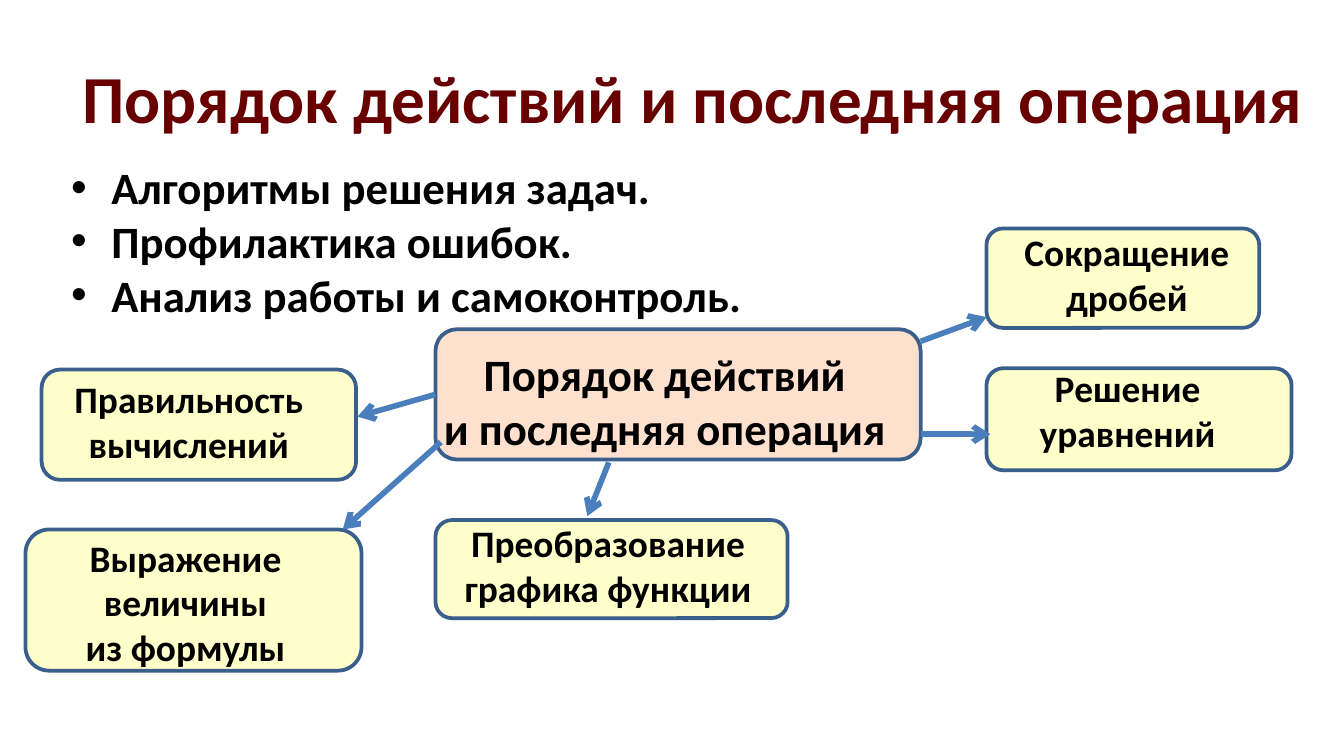
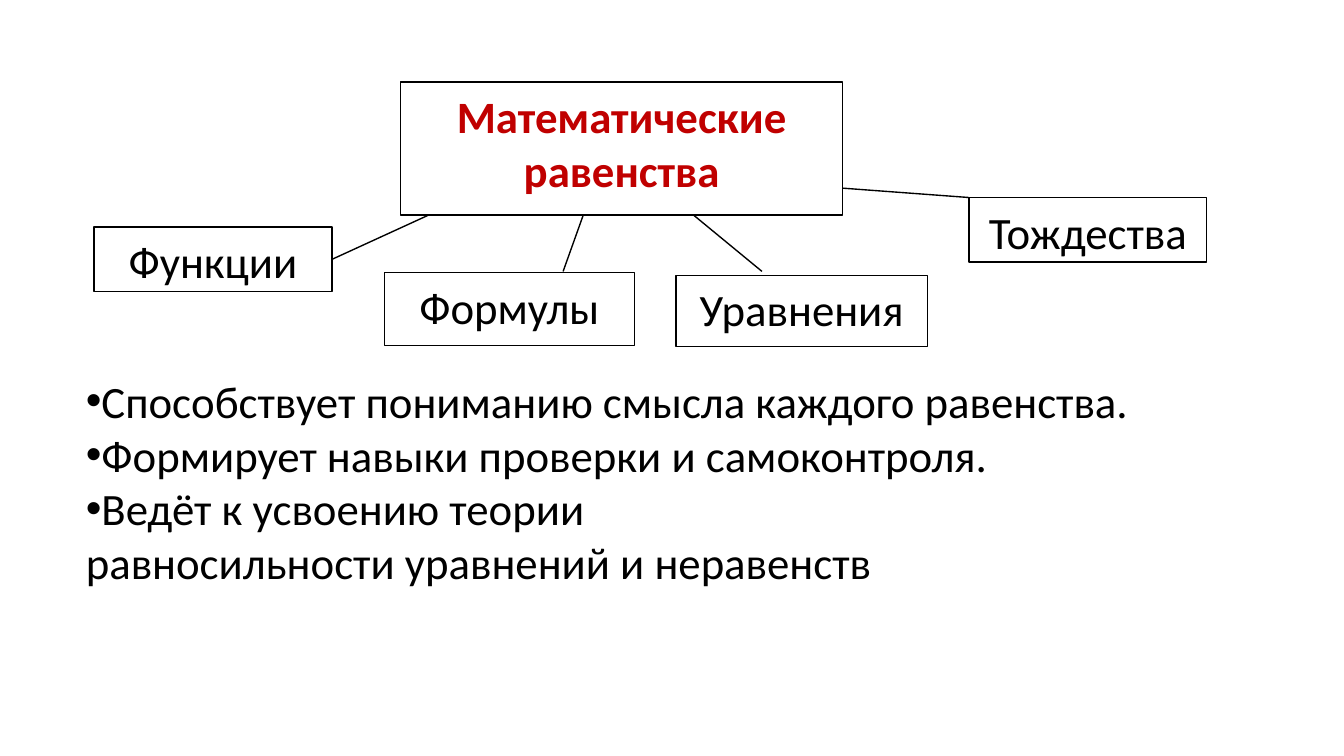
from lxml import etree
from pptx import Presentation
from pptx import util as u
from pptx.dml.color import RGBColor
from pptx.enum import shapes, text
from pptx.oxml.ns import qn

COLUMNS, ROWS = 100, 56.25
WIDTH, HEIGHT = u.Inches(10), u.Inches(5.625)
FONT = "Calibri"
BLACK, WHITE = "000000", "FFFFFF"
MAROON, RED = "680000", "C00000"
PEACH, CREAM = "FEDFCE", "FFFFCC"
OUTLINE, ARROW = "3A5F8C", "4B7EBC"


def color(value):
    return RGBColor.from_string(value)


def grid_x(columns):
    return round(columns * WIDTH / COLUMNS)


def grid_y(rows):
    return round(rows * HEIGHT / ROWS)


def area(box):
    left, top, width, height = box
    return grid_x(left), grid_y(top), grid_x(width), grid_y(height)


def inside(box, offset):
    return box[0] + offset[0], box[1] + offset[1], offset[2], offset[3]


def write(frame, lines, size=24, bold=False, ink=BLACK, align=None,
          after=None, bullet=False, margin=0, indent=0):
    frame.word_wrap = True
    for number, line in enumerate(lines):
        para = frame.paragraphs[0] if number == 0 else frame.add_paragraph()
        para.alignment = align
        if after is not None:
            para.space_after = u.Pt(after)
        properties = para._p.get_or_add_pPr()
        properties.set("marL", str(u.Inches(margin)))
        properties.set("indent", str(u.Inches(indent)))
        if bullet:
            etree.SubElement(properties, qn("a:buFont")).set("typeface", "Arial")
            etree.SubElement(properties, qn("a:buChar")).set("char", "•")
        span = para.add_run()
        span.text = line
        span.font.name = FONT
        span.font.size = u.Pt(size)
        span.font.bold = bold
        span.font.color.rgb = color(ink)


def add_text(page, box, lines, **style):
    frame = page.shapes.add_textbox(*area(box)).text_frame
    write(frame, lines, **style)
    frame.auto_size = text.MSO_AUTO_SIZE.SHAPE_TO_FIT_TEXT
    return frame


def add_box(canvas, box, kind, fill, line, weight):
    shape = canvas.add_shape(kind, *area(box))
    shape.shadow.inherit = False
    shape.fill.solid()
    shape.fill.fore_color.rgb = color(fill)
    shape.line.color.rgb = color(line)
    shape.line.width = u.Pt(weight)
    return shape


def add_line(canvas, start, end, line, weight, arrow=False):
    link = canvas.add_connector(
        shapes.MSO_CONNECTOR.STRAIGHT,
        grid_x(start[0]), grid_y(start[1]), grid_x(end[0]), grid_y(end[1]))
    link.line.color.rgb = color(line)
    link.line.width = u.Pt(weight)
    if arrow:
        etree.SubElement(link.line._get_or_add_ln(), qn("a:tailEnd")).set("type", "arrow")
    etree.SubElement(link._element.spPr, qn("a:effectLst"))
    return link


def add_title(page, box, title):
    holder = page.shapes.title
    holder.left, holder.top, holder.width, holder.height = area(box)
    frame = holder.text_frame
    frame.auto_size = text.MSO_AUTO_SIZE.NONE
    frame.vertical_anchor = text.MSO_ANCHOR.MIDDLE
    write(frame, [title], size=36, bold=True, ink=MAROON, align=text.PP_ALIGN.CENTER)


def add_node(page, box, label, lines, fill=CREAM, size=20):
    node = add_box(page.shapes, box, shapes.MSO_SHAPE.ROUNDED_RECTANGLE, fill, OUTLINE, 2)
    add_text(page, inside(box, label), lines, size=size, bold=True,
             align=text.PP_ALIGN.CENTER)
    return node


def add_operations_map(page):
    hub = add_node(page, (32.4, 24.5, 36.1, 9.7), (-1.7, 0.8, 37.5, 9.1),
                   ["Порядок действий", "и последняя операция"], fill=PEACH, size=24)
    tint = hub._element.spPr.find(qn("a:solidFill"))[0]
    etree.SubElement(tint, qn("a:alpha")).set("val", "96000")
    nodes = [
        ((3.1, 27.5, 23.4, 8.2), (-3.1, 0, 28.1, 7.7), ["Правильность вычислений"]),
        ((1.9, 39.4, 25, 10.5), (-0.2, -0.1, 24.2, 11.1), ["Выражение величины", "из формулы"]),
        ((73.4, 17, 20.3, 7.4), (-0.9, -0.4, 22.7, 7.7), ["Сокращение", "дробей"]),
        ((73.4, 27.4, 22.7, 7.6), (1.1, -0.7, 18.8, 7.7), ["Решение уравнений"]),
        ((32.4, 38.7, 26.2, 7.3), (-2.4, -0.5, 30.5, 7.7), ["Преобразование", "графика функции"]),
    ]
    for box, label, lines in nodes:
        add_node(page, box, label, lines)
    arrows = [
        ((68.5, 25.4), (73.4, 23.6)),
        ((45.3, 34.4), (43.7, 38.4)),
        ((32.8, 32.9), (25.5, 39.4)),
        ((68.5, 32.3), (73.7, 32.3)),
    ]
    for start, end in arrows:
        add_line(page.shapes, start, end, ARROW, 3, arrow=True)
    add_line(page.shapes, (32.4, 29.3), (26.6, 31), ARROW, 3, arrow=True).begin_connect(hub, 1)


def add_equality_box(canvas, box, label, **style):
    shape = add_box(canvas, box, shapes.MSO_SHAPE.RECTANGLE, WHITE, BLACK, 0.75)
    shape.text_frame.vertical_anchor = text.MSO_ANCHOR.TOP
    write(shape.text_frame, [label], align=text.PP_ALIGN.CENTER, after=10, **style)
    return shape


def add_equality_tree(page):
    canvas = page.shapes.add_group_shape().shapes
    add_equality_box(canvas, (29.8, 6.1, 32.9, 9.9), "Математические равенства",
                     bold=True, ink=RED)
    functions = add_equality_box(canvas, (7, 16.9, 17.7, 4.8), "Функции")
    others = [
        ((28.6, 20.3, 18.6, 5.4), "Формулы"),
        ((50.3, 20.5, 18.7, 5.3), "Уравнения"),
        ((72.1, 14.7, 17.7, 4.8), "Тождества"),
    ]
    for box, label in others:
        add_equality_box(canvas, box, label)
    branches = [
        ((62.7, 14), (72.1, 14.7)),
        ((51.6, 16), (56.7, 20.2)),
        ((43.4, 16), (41.9, 20.2)),
    ]
    for start, end in branches:
        add_line(canvas, start, end, BLACK, 0.75)
    add_line(canvas, (31.9, 16), (24.7, 19.3), BLACK, 0.75).end_connect(functions, 3)


def build_order_slide(deck):
    page = deck.slides.add_slide(deck.slide_layouts[5])
    add_title(page, (3.9, 4.5, 95.3, 5.4), "Порядок действий и последняя операция")
    add_operations_map(page)
    add_text(page, (4.3, 11.4, 80.5, 13.1),
             ["Алгоритмы решения задач.", "Профилактика ошибок.", "Анализ работы и самоконтроль."],
             bold=True, bullet=True, margin=0.3, indent=-0.3)


def build_equalities_slide(deck):
    page = deck.slides.add_slide(deck.slide_layouts[6])
    add_equality_tree(page)
    frame = add_text(page, (1.4, 27.3, 91.5, 17.2),
                     ["Способствует пониманию смысла каждого равенства.",
                      "Формирует навыки проверки и самоконтроля.",
                      "Ведёт к усвоению теории",
                      "равносильности уравнений и неравенств"],
                     bullet=True, indent=0.4)
    closing = frame.paragraphs[-1]._p.pPr
    for tag in ("a:buFont", "a:buChar"):
        closing.remove(closing.find(qn(tag)))


def main():
    deck = Presentation()
    deck.slide_width, deck.slide_height = WIDTH, HEIGHT
    build_order_slide(deck)
    build_equalities_slide(deck)
    deck.save("out.pptx")


if __name__ == "__main__":
    main()
